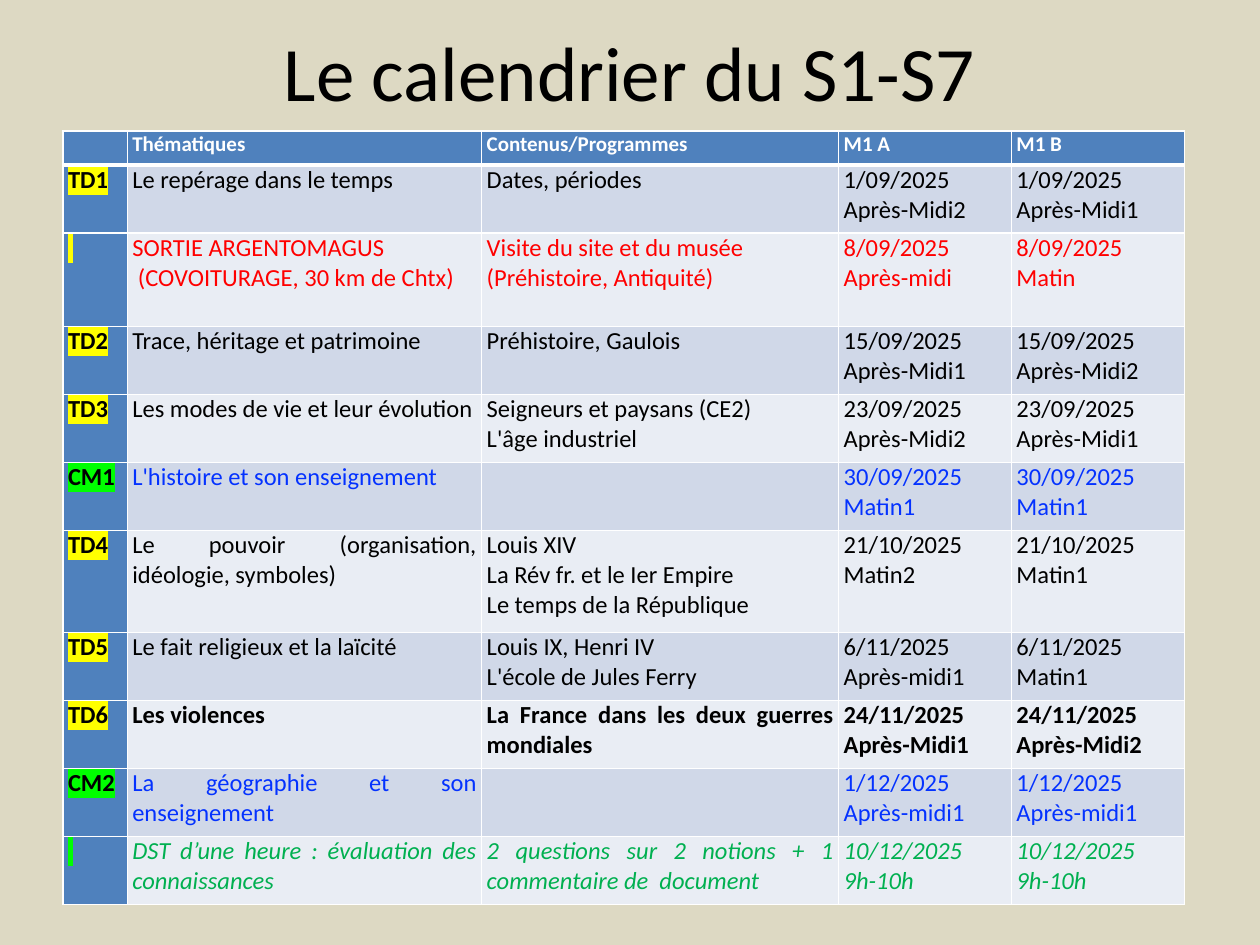
from dataclasses import dataclass

from lxml.etree import SubElement
from pptx import Presentation
from pptx.dml.color import RGBColor
from pptx.enum.text import MSO_ANCHOR, PP_ALIGN
from pptx.oxml.ns import qn
from pptx.util import Inches, Pt


@dataclass(frozen=True)
class Theme:
    font: str = "Calibri"
    background: str = "DDD9C3"
    header: str = "4F81BD"
    bands: tuple = ("D0D8E8", "E9EDF4")
    white: str = "FFFFFF"
    black: str = "000000"
    red: str = "FF0000"
    blue: str = "0432FF"
    green: str = "00B050"
    td_mark: str = "FFFF00"
    cm_mark: str = "00FF00"
    title_size: int = 44
    header_size: int = 12
    body_size: int = 14


@dataclass(frozen=True)
class Style:
    color: str
    size: int = 14
    bold: bool = False
    italic: bool = False
    mark: str = ""


T = Theme()
TITLE = Style(T.black, T.title_size)
HEADER = Style(T.white, T.header_size, bold=True)
PLAIN = Style(T.black, T.body_size)
STRONG = Style(T.black, T.body_size, bold=True)
OUTING = Style(T.red, T.body_size)
LECTURE = Style(T.blue, T.body_size)
EXAM = Style(T.green, T.body_size, italic=True)
TD = Style(T.black, T.body_size, bold=True, mark=T.td_mark)
CM = Style(T.black, T.body_size, bold=True, mark=T.cm_mark)

COL_WIDTHS = (0.51, 2.81, 2.83, 1.37, 1.37)
HEADER_HEIGHT = 0.27
HEADINGS = ("", "Thématiques", "Contenus/Programmes", "M1 A", "M1 B")

# (height, label style, text style, cell texts)
SESSIONS = [
    (0.54, TD, PLAIN, ("TD1", "Le repérage dans le temps", "Dates, périodes",
                       "1/09/2025\nAprès-Midi2", "1/09/2025\nAprès-Midi1")),
    (0.74, TD, OUTING, (" ", "SORTIE ARGENTOMAGUS\n (COVOITURAGE, 30 km de Chtx)",
                        "Visite du site et du musée\n(Préhistoire, Antiquité)",
                        "8/09/2025\nAprès-midi", "8/09/2025\nMatin")),
    (0.54, TD, PLAIN, ("TD2", "Trace, héritage et patrimoine", "Préhistoire, Gaulois",
                       "15/09/2025\nAprès-Midi1", "15/09/2025\nAprès-Midi2")),
    (0.54, TD, PLAIN, ("TD3", "Les modes de vie et leur évolution",
                       "Seigneurs et paysans (CE2)\nL'âge industriel",
                       "23/09/2025\nAprès-Midi2", "23/09/2025\nAprès-Midi1")),
    (0.54, CM, LECTURE, ("CM1", "L'histoire et son enseignement", "",
                         "30/09/2025\nMatin1", "30/09/2025\nMatin1")),
    (0.81, TD, PLAIN, ("TD4", "Le pouvoir (organisation, idéologie, symboles)",
                       "Louis XIV\nLa Rév fr. et le Ier Empire\nLe temps de la République",
                       "21/10/2025\nMatin2", "21/10/2025\nMatin1")),
    (0.54, TD, PLAIN, ("TD5", "Le fait religieux et la laïcité",
                       "Louis IX, Henri IV\nL'école de Jules Ferry",
                       "6/11/2025\nAprès-midi1", "6/11/2025\nMatin1")),
    (0.54, TD, STRONG, ("TD6", "Les violences", "La France dans les deux guerres mondiales",
                        "24/11/2025\nAprès-Midi1", "24/11/2025\nAprès-Midi2")),
    (0.54, CM, LECTURE, ("CM2", "La géographie et son enseignement", "",
                         "1/12/2025\nAprès-midi1", "1/12/2025\nAprès-midi1")),
    (0.54, CM, EXAM, (" ", "DST d’une heure : évaluation des connaissances",
                      "2 questions sur 2 notions + 1 commentaire de  document",
                      "10/12/2025\n9h-10h", "10/12/2025\n9h-10h")),
]


def rgb(color):
    return RGBColor.from_string(color)


def add_text(p, text, style, align):
    p.alignment = align
    if not text:
        # Keeps an empty cell from growing its row.
        SubElement(p._p, qn("a:endParaRPr"), sz=str(style.size * 100))
        return
    r = p.add_run()
    r.text = text
    f = r.font
    f.size, f.bold, f.italic = Pt(style.size), style.bold, style.italic
    f.color.rgb = rgb(style.color)
    if style.mark:
        # The schema wants the highlight ahead of the font name.
        highlight = SubElement(r._r.get_or_add_rPr(), qn("a:highlight"))
        SubElement(highlight, qn("a:srgbClr"), val=style.mark)
    f.name = T.font


def set_borders(cell, bottom):
    """Draw white cell edges; call before filling, as edges precede the fill."""
    tcPr = cell._tc.get_or_add_tcPr()
    for side, width in (("L", 1), ("R", 1), ("T", 1), ("B", bottom)):
        ln = SubElement(tcPr, qn(f"a:ln{side}"), w=str(Pt(width)))
        fill = SubElement(ln, qn("a:solidFill"))
        SubElement(fill, qn("a:srgbClr"), val=T.white)


def fill_cell(cell, text, style, fill, bottom=1):
    set_borders(cell, bottom)
    cell.fill.solid()
    cell.fill.fore_color.rgb = rgb(fill)
    cell.margin_left = cell.margin_right = Inches(0.04)
    cell.margin_top = cell.margin_bottom = 0
    tf = cell.text_frame
    for i, line in enumerate(text.split("\n")):
        p = tf.add_paragraph() if i else tf.paragraphs[0]
        add_text(p, line, style, PP_ALIGN.JUSTIFY)


def add_title(s, text, left, top, width, height):
    sp = s.shapes.title
    sp.left, sp.top, sp.width, sp.height = left, top, width, height
    tf = sp.text_frame
    tf.vertical_anchor = MSO_ANCHOR.MIDDLE
    add_text(tf.paragraphs[0], text, TITLE, PP_ALIGN.CENTER)


def add_calendar(s, left, top, width, height):
    table = s.shapes.add_table(len(SESSIONS) + 1, len(COL_WIDTHS),
                               left, top, width, height).table
    for column, share in zip(table.columns, COL_WIDTHS):
        column.width = int(width * share / sum(COL_WIDTHS))
    table.rows[0].height = Inches(HEADER_HEIGHT)
    for col, heading in enumerate(HEADINGS):
        fill_cell(table.cell(0, col), heading, HEADER, T.header, bottom=3)
    for row, (row_height, label, body, texts) in enumerate(SESSIONS, 1):
        table.rows[row].height = Inches(row_height)
        band = T.bands[(row - 1) % 2]
        for col, text in enumerate(texts):
            style, fill = (body, band) if col else (label, T.header)
            fill_cell(table.cell(row, col), text, style, fill)


def main():
    prs = Presentation()
    prs.slide_width, prs.slide_height = Inches(10), Inches(7.5)
    s = prs.slides.add_slide(prs.slide_layouts[5])
    s.background.fill.solid()
    s.background.fill.fore_color.rgb = rgb(T.background)
    add_title(s, "Le calendrier du S1-S7", Inches(0.5), 0, Inches(9), Inches(1.12))
    add_calendar(s, Inches(0.5), Inches(1.04), Inches(8.9), Inches(6.13))
    prs.save("out.pptx")


if __name__ == "__main__":
    main()
